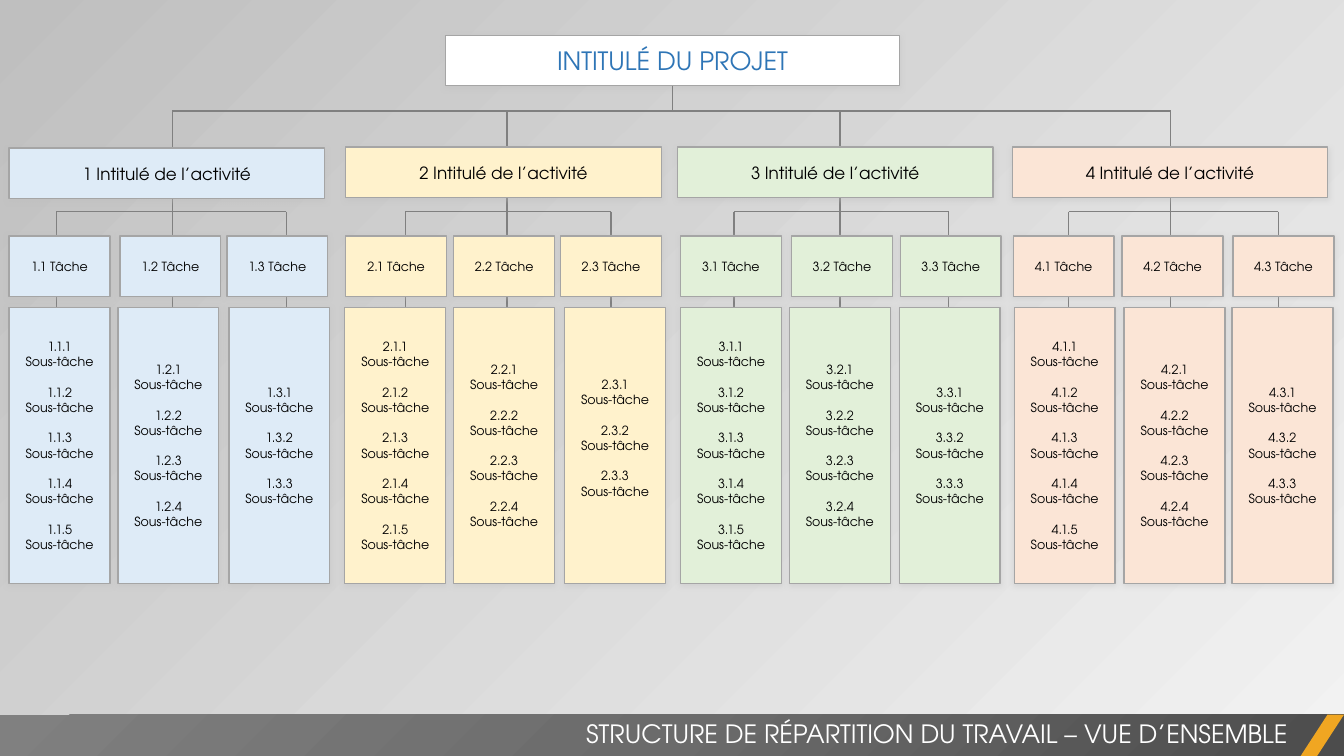
from lxml import etree
from pptx import Presentation
from pptx.dml.color import RGBColor
from pptx.enum.shapes import MSO_CONNECTOR, MSO_SHAPE
from pptx.enum.text import MSO_ANCHOR, PP_ALIGN
from pptx.oxml import parse_xml
from pptx.oxml.ns import nsdecls, qn
from pptx.util import Emu, Pt

RECTANGLE = MSO_SHAPE.RECTANGLE
PARALLELOGRAM = MSO_SHAPE.PARALLELOGRAM
STRAIGHT = MSO_CONNECTOR.STRAIGHT
CENTER, RIGHT = PP_ALIGN.CENTER, PP_ALIGN.RIGHT
TOP, MIDDLE = MSO_ANCHOR.TOP, MSO_ANCHOR.MIDDLE

EMU_PER_PX = 9144
BOTTOM_SIDE = 2
FONT = "TeX Gyre Adventor"
COLORS = {
    "white": "FFFFFF", "black": "000000", "title": "2E75B6",
    "link": "808080", "border": "A5A5A5", "shadow": "BFBFBF",
    "light": "F2F2F2", "dark": "BFBFBF", "accent": "F0A622",
    "blue": "DEEBF7", "yellow": "FFF2CC", "green": "E2F0D9", "orange": "FBE5D6",
}
BAR_STOPS = ((0, "4C4C4C"), (50, "6B6B6B"), (100, "808080"))

TRUNK_Y, BRANCH_Y, LINK_END_Y = 110, 210, 333
TASK_Y, SUBTASK_Y = 234, 305
SUBTASK_COUNTS = (5, 4, 3)
BRANCHES = (
    {"color": "blue", "at": (9, 147), "links": (56, 171, 284),
     "tasks": (9, 119, 225), "subtasks": (9, 117, 227)},
    {"color": "yellow", "at": (343, 146), "links": (402, 503, 606),
     "tasks": (343, 450, 556), "subtasks": (342, 450, 560)},
    {"color": "green", "at": (672, 146), "links": (728, 833, 941),
     "tasks": (675, 785, 893), "subtasks": (675, 783, 892)},
    {"color": "orange", "at": (1004, 146), "links": (1060, 1161, 1268),
     "tasks": (1005, 1113, 1223), "subtasks": (1006, 1115, 1222)},
)


def px(value):
    return Emu(value * EMU_PER_PX)


def rgb(name):
    return RGBColor.from_string(COLORS[name])


def write(frame, *texts, size=9, color="black", align=CENTER, anchor=MIDDLE, gap=0):
    frame.word_wrap = True
    frame.vertical_anchor = anchor
    for index, text in enumerate(texts):
        paragraph = frame.add_paragraph() if index else frame.paragraphs[0]
        paragraph.text = text
        paragraph.alignment = align
        paragraph.space_after = Pt(gap)
        for run in paragraph.runs:
            run.font.name = FONT
            run.font.size = Pt(size)
            run.font.color.rgb = rgb(color)


class WorkBreakdown:
    def __init__(self, slide):
        self.slide = slide

    def background(self):
        fill = self.slide.background.fill
        fill.gradient()
        fill.gradient_angle = 135
        for stop, name in zip(fill.gradient_stops, ("light", "dark")):
            stop.color.rgb = rgb(name)
        light = next(self.slide.element.iter(qn("a:srgbClr")))
        etree.SubElement(light, qn("a:alpha"), val="40000")

    def plain(self, kind, left, top, width, height, fill):
        shape = self.slide.shapes.add_shape(kind, px(left), px(top), px(width), px(height))
        shape.shadow.inherit = False
        shape.fill.solid()
        shape.fill.fore_color.rgb = rgb(fill)
        shape.line.fill.background()
        return shape

    def box(self, left, top, width, height, fill, *texts, **text_format):
        shape = self.plain(RECTANGLE, left, top, width, height, fill)
        shape.line.color.rgb = rgb("border")
        shape.line.width = Pt(1)
        effects = shape.element.spPr.find(qn("a:effectLst"))
        shadow = etree.SubElement(effects, qn("a:outerShdw"), blurRad=str(Pt(4)),
                                  dist=str(Pt(1)), dir="5400000", rotWithShape="0")
        tint = etree.SubElement(shadow, qn("a:srgbClr"), val=COLORS["shadow"])
        etree.SubElement(tint, qn("a:alpha"), val="40000")
        write(shape.text_frame, *texts, **text_format)
        return shape

    def link(self, x1, y1, x2, y2):
        line = self.slide.shapes.add_connector(STRAIGHT, px(x1), px(y1), px(x2), px(y2))
        line.line.color.rgb = rgb("link")
        line.line.width = Pt(1)
        etree.SubElement(line._element.spPr, qn("a:effectLst"))
        return line

    def branch_links(self, links):
        first, middle, last = links
        self.link(first, BRANCH_Y, last, BRANCH_Y)
        self.link(middle, TRUNK_Y, middle, LINK_END_Y)
        for x in (first, last):
            self.link(x, BRANCH_Y, x, LINK_END_Y)

    def branch(self, number, color, at, tasks, subtasks):
        self.box(*at, 313, 50, color, f"{number} Intitulé de l’activité", size=12)
        columns = zip(tasks, subtasks, SUBTASK_COUNTS)
        for column, (task_x, subtask_x, count) in enumerate(columns, 1):
            code = f"{number}.{column}"
            self.box(task_x, TASK_Y, 100, 60, color, f"{code} Tâche")
            items = [f"{code}.{item}\vSous-tâche" for item in range(1, count + 1)]
            subtask_box = self.box(subtask_x, SUBTASK_Y, 100, 274, color, *items, gap=10.9)
            if code == "2.3":
                subtask_box.text_frame.margin_bottom = px(20)

    def footer(self, text):
        bar = self.plain(RECTANGLE, 0, 709, 1333, 41, "link")
        stops = "".join(f'<a:gs pos="{position * 1000}"><a:srgbClr val="{color}"/></a:gs>'
                        for position, color in BAR_STOPS)
        gradient = parse_xml(
            f'<a:gradFill {nsdecls("a")} rotWithShape="1"><a:gsLst>{stops}</a:gsLst>'
            '<a:path path="circle"><a:fillToRect l="100000" t="100000"/></a:path>'
            '</a:gradFill>')
        properties = bar.element.spPr
        properties.replace(properties.find(qn("a:solidFill")), gradient)
        accent = self.plain(PARALLELOGRAM, 1290, 709, 43, 41, "accent")
        accent.adjustments[0] = 0.65
        caption = self.slide.shapes.add_textbox(px(284), px(708), px(1003), px(40))
        write(caption.text_frame, text, size=18, color="white", align=RIGHT, anchor=TOP)


def main():
    presentation = Presentation()
    presentation.slide_width = px(1333)
    presentation.slide_height = px(750)
    chart = WorkBreakdown(presentation.slides.add_slide(presentation.slide_layouts[6]))
    chart.background()

    project = chart.box(442, 35, 450, 50, "white", "INTITULÉ DU PROJET",
                        size=18, color="title")
    trunk = chart.link(667, 85, 667, TRUNK_Y)
    trunk.begin_connect(project, BOTTOM_SIDE)
    chart.link(BRANCHES[0]["links"][1], TRUNK_Y, BRANCHES[-1]["links"][1], TRUNK_Y)

    for branch in BRANCHES:
        chart.branch_links(branch["links"])
    for number, branch in enumerate(BRANCHES, 1):
        chart.branch(number, **{part: branch[part]
                                for part in ("color", "at", "tasks", "subtasks")})

    chart.footer("STRUCTURE DE RÉPARTITION DU TRAVAIL – VUE D’ENSEMBLE")
    presentation.save("out.pptx")


if __name__ == "__main__":
    main()
